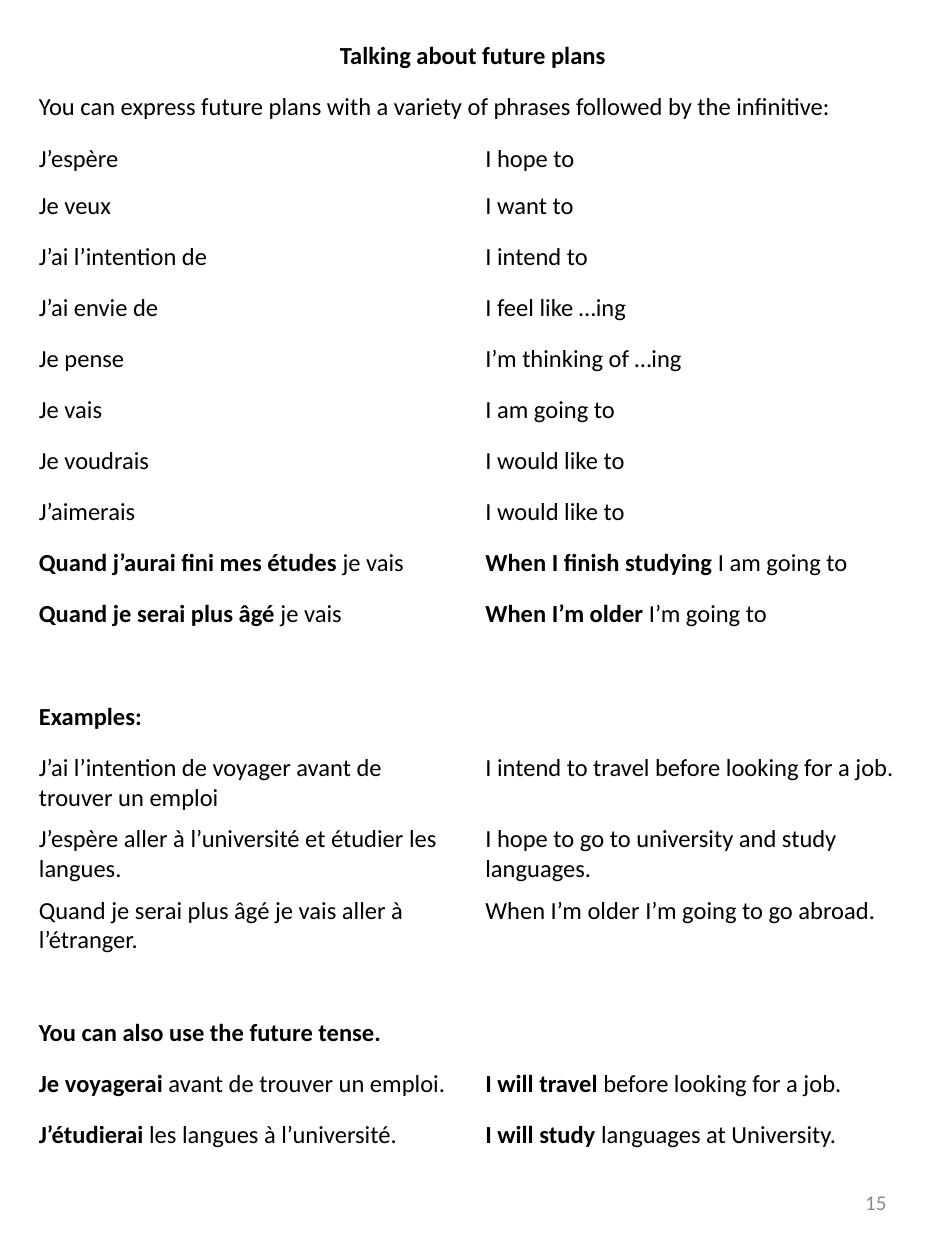
from pptx import Presentation
from pptx.dml.color import RGBColor
from pptx.enum.text import MSO_ANCHOR, PP_ALIGN
from pptx.oxml.ns import qn
from pptx.util import Cm, Pt

BLACK = RGBColor(0x00, 0x00, 0x00)
GREY = RGBColor(0x8C, 0x8C, 0x8C)
LEFT, CENTER, RIGHT = PP_ALIGN.LEFT, PP_ALIGN.CENTER, PP_ALIGN.RIGHT
MIDDLE = MSO_ANCHOR.MIDDLE
NO_STYLE_NO_GRID = "{2D5ABB26-0587-4C30-8999-92F81FD0307C}"

ROW_HEIGHT = 1.03
FIRST_PHRASE_HEIGHT = 0.95
COLUMN_WIDTH = 9

TITLE = "Talking about future plans"
FIRST_PHRASE = "J’espère"

# One cell in a row spans both columns; a (bold, regular) pair is mixed text.
ROWS = [
    [(TITLE, "")],
    ["You can express future plans with a variety of phrases followed by the infinitive:"],
    [FIRST_PHRASE, "I hope to"],
    ["Je veux", "I want to"],
    ["J’ai l’intention de", "I intend to"],
    ["J’ai envie de", "I feel like …ing"],
    ["Je pense", "I’m thinking of …ing"],
    ["Je vais", "I am going to"],
    ["Je voudrais", "I would like to"],
    ["J’aimerais", "I would like to"],
    [("Quand j’aurai fini mes études ", "je vais"),
     ("When I finish studying ", "I am going to")],
    [("Quand je serai plus âgé", " je vais"),
     ("When I’m older ", "I’m going to")],
    ["", ""],
    [("Examples:", "")],
    ["J’ai l’intention de voyager avant de trouver un emploi",
     "I intend to travel before looking for a job."],
    ["J’espère aller à l’université et étudier les langues.",
     "I hope to go to university and study languages."],
    ["Quand je serai plus âgé je vais aller à l’étranger.",
     "When I’m older I’m going to go abroad."],
    ["", ""],
    [("You can also use the future tense.", "")],
    [("Je voyagerai ", "avant de trouver un emploi."),
     ("I will travel ", "before looking for a job.")],
    [("J’étudierai", " les langues à l’université."),
     ("I will study ", "languages at University.")],
]


class Page:
    font_name = "Calibri"

    def __init__(self, slide):
        self.slide = slide

    def fill_text(self, frame, content, size=14, color=BLACK, align=LEFT):
        """Fill a text frame with plain text or a (bold, regular) pair."""
        paragraph = frame.paragraphs[0]
        paragraph.alignment = align
        font = paragraph.font
        font.name, font.size = self.font_name, Pt(size)
        font.color.rgb = color
        bold, regular = content if isinstance(content, tuple) else ("", content)
        for words, is_bold in ((bold, True), (regular, False)):
            if words:
                run = paragraph.add_run()
                run.text = words
                run.font.bold = is_bold

    def text(self, left, top, width, height, content, **style):
        box = self.slide.shapes.add_textbox(Cm(left), Cm(top), Cm(width), Cm(height))
        frame = box.text_frame
        frame.word_wrap = True
        frame.vertical_anchor = MIDDLE
        self.fill_text(frame, content, **style)

    def table(self, left, top, rows):
        frame = self.slide.shapes.add_table(
            len(rows), 2, Cm(left), Cm(top),
            Cm(2 * COLUMN_WIDTH), Cm(ROW_HEIGHT * len(rows)))
        table = frame.table
        table.first_row = table.horz_banding = False
        table._tbl.tblPr.find(qn("a:tableStyleId")).text = NO_STYLE_NO_GRID
        for column in table.columns:
            column.width = Cm(COLUMN_WIDTH)
        for index, contents in enumerate(rows):
            is_first_phrase = contents[0] == FIRST_PHRASE
            table.rows[index].height = Cm(
                FIRST_PHRASE_HEIGHT if is_first_phrase else ROW_HEIGHT)
            if len(contents) == 1:
                table.cell(index, 0).merge(table.cell(index, 1))
            for position, content in enumerate(contents):
                cell = table.cell(index, position)
                cell.fill.background()
                align = CENTER if content == (TITLE, "") else LEFT
                self.fill_text(cell.text_frame, content, align=align)


def main():
    presentation = Presentation()
    presentation.slide_width, presentation.slide_height = Cm(19.05), Cm(25.4)
    page = Page(presentation.slides.add_slide(presentation.slide_layouts[6]))
    page.text(13.67, 23.55, 4.45, 1.35, "15", size=12, color=GREY, align=RIGHT)
    page.table(0.53, 0.71, ROWS)
    presentation.save("out.pptx")


if __name__ == "__main__":
    main()
